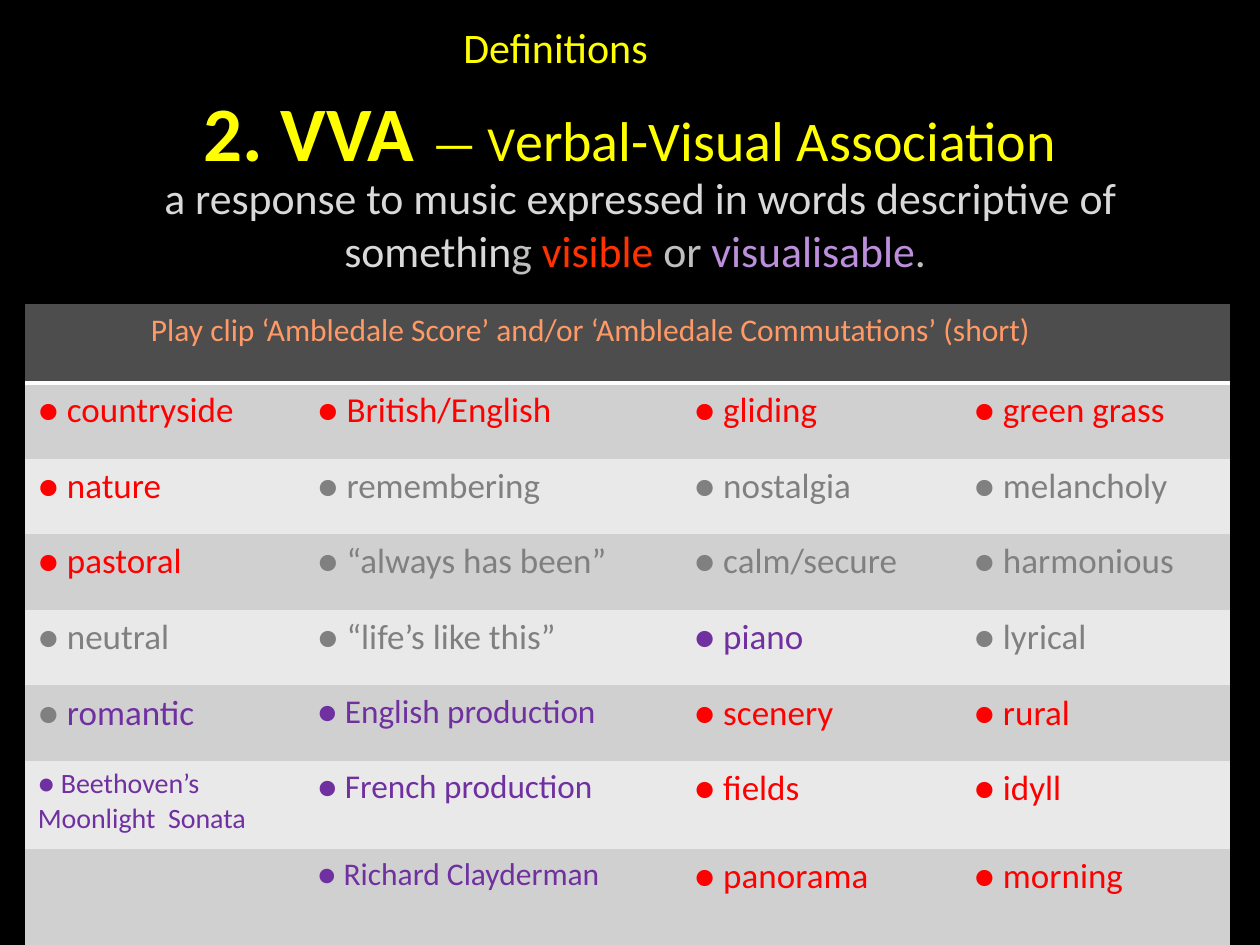
"""Build the slide that defines verbal-visual association."""
from dataclasses import dataclass

from lxml.etree import SubElement
from pptx import Presentation
from pptx.dml.color import RGBColor as Rgb
from pptx.enum.text import MSO_ANCHOR as Anchor, MSO_AUTO_SIZE as AutoSize, PP_ALIGN as Align
from pptx.oxml.ns import qn
from pptx.util import Inches, Pt

COLORS = {
    "black": "000000", "yellow": "FFFF00", "light": "D9D9D9", "silver": "BFBFBF",
    "orange": "FF3300", "lilac": "BC8FDD", "peach": "FF9966", "header": "4D4D4D",
    "band_dark": "D0D0D0", "band_light": "E9E9E9", "white": "FFFFFF",
    "red": "FF0000", "gray": "808080", "purple": "7030A0",
}
FONT = "Calibri"
PLAIN_TABLE_STYLE = "{2D5ABB26-0587-4C30-8999-92F81FD0307C}"
COLUMN_WIDTHS = (2.22, 2.99, 2.22, 2.13)
ROW_HEIGHTS = (0.63, 0.6, 0.6, 0.6, 0.6, 0.6, 0.7, 0.88)


@dataclass(frozen=True)
class Span:
    text: str
    color: str
    size: float
    bold: bool = False


@dataclass(frozen=True)
class Term:
    text: str
    color: str
    size: float = 20
    bullet_color: str = ""


@dataclass(frozen=True)
class TextBox:
    left: float
    top: float
    width: float
    height: float
    spans: tuple[Span, ...]
    align: Align = Align.LEFT


BOXES = (
    TextBox(0.91, 1.31, 8.34, 0.94, (
        Span("a response to music expressed in words descriptive of somethin", "light", 25),
        Span("g ", "silver", 25),
        Span("visible ", "orange", 25),
        Span("or ", "silver", 25),
        Span("visualisable", "lilac", 25),
        Span(". ", "silver", 25),
    ), Align.CENTER),
    TextBox(1.1, 2.41, 8.9, 0.4, (
        Span("Play clip ‘Ambledale Score’ and/or ‘Ambledale Commutations’ (short)", "peach", 18),
    )),
    TextBox(3.58, 0.12, 2.44, 0.5, (Span("Definitions", "yellow", 24),)),
)
TITLE_SPANS = (
    Span("2. VVA ", "yellow", 44, True),
    Span("— V", "yellow", 28),
    Span("erbal-Visual Association", "yellow", 32),
)
TERM_ROWS = (
    (Term("countryside", "red"), Term("British/English", "red"),
     Term("gliding", "red"), Term("green grass", "red")),
    (Term("nature", "red"), Term("remembering", "gray"),
     Term("nostalgia", "gray"), Term("melancholy", "gray")),
    (Term("pastoral", "red"), Term("“always has been”", "gray"),
     Term("calm/secure", "gray"), Term("harmonious", "gray")),
    (Term("neutral", "gray"), Term("“life’s like this”", "gray"),
     Term("piano", "purple"), Term("lyrical", "gray")),
    (Term("romantic", "purple", bullet_color="gray"), Term("English production", "purple", 19),
     Term("scenery", "red"), Term("rural", "red")),
    (Term("Beethoven’s Moonlight  Sonata", "purple", 16), Term("French production", "purple", 19),
     Term("fields", "red"), Term("idyll", "red")),
    (None, Term("Richard Clayderman", "purple", 18),
     Term("panorama", "red"), Term("morning", "red")),
)


def rgb(name: str) -> Rgb:
    """Look up a named colour."""
    return Rgb.from_string(COLORS[name])


def write(para, text: str, *, color: str, size: float, bold: bool = False) -> None:
    """Append one formatted run to a paragraph."""
    run = para.add_run()
    run.text = text
    run.font.name = FONT
    run.font.size = Pt(size)
    run.font.bold = bold
    run.font.color.rgb = rgb(color)


def write_spans(para, spans: tuple[Span, ...], align: Align) -> None:
    """Write a sequence of spans into an aligned paragraph."""
    para.alignment = align
    for span in spans:
        write(para, span.text, color=span.color, size=span.size, bold=span.bold)


def fill_title(title) -> None:
    """Place and write the title placeholder."""
    title.left, title.top = Inches(0.75), Inches(0.68)
    title.width, title.height = Inches(8.5), Inches(0.71)
    frame = title.text_frame
    frame.auto_size = AutoSize.NONE
    frame.vertical_anchor = Anchor.MIDDLE
    write_spans(frame.paragraphs[0], TITLE_SPANS, Align.CENTER)


def add_box(slide, box: TextBox) -> None:
    """Add a wrapping text box."""
    shape = slide.shapes.add_textbox(
        Inches(box.left), Inches(box.top), Inches(box.width), Inches(box.height))
    frame = shape.text_frame
    frame.word_wrap = True
    frame.auto_size = AutoSize.SHAPE_TO_FIT_TEXT
    write_spans(frame.paragraphs[0], box.spans, box.align)


def paint(cell, color: str) -> None:
    """Fill a table cell."""
    cell.fill.solid()
    cell.fill.fore_color.rgb = rgb(color)


def underline_cell(cell, color: str, width: float) -> None:
    """Draw a bottom border on a table cell."""
    properties = cell._tc.get_or_add_tcPr()
    border = SubElement(properties, qn("a:lnB"), w=str(Pt(width)))
    SubElement(SubElement(border, qn("a:solidFill")), qn("a:srgbClr"), val=COLORS[color])
    properties.insert(0, border)


def write_term(cell, term: Term) -> None:
    """Write a bulleted term into a table cell."""
    para = cell.text_frame.paragraphs[0]
    if term.bullet_color:
        write(para, "● ", color=term.bullet_color, size=term.size)
        write(para, term.text, color=term.color, size=term.size)
    else:
        write(para, f"● {term.text}", color=term.color, size=term.size)


def add_term_table(slide) -> None:
    """Add the banded table of responses."""
    frame = slide.shapes.add_table(
        len(ROW_HEIGHTS), len(COLUMN_WIDTHS), Inches(0.2), Inches(2.41),
        Inches(sum(COLUMN_WIDTHS)), Inches(sum(ROW_HEIGHTS)))
    table = frame.table
    table._tbl.tblPr.find(qn("a:tableStyleId")).text = PLAIN_TABLE_STYLE
    for column, width in zip(table.columns, COLUMN_WIDTHS):
        column.width = Inches(width)
    for row, height in zip(table.rows, ROW_HEIGHTS):
        row.height = Inches(height)
    for cell in table.rows[0].cells:
        paint(cell, "header")
        underline_cell(cell, "white", 2)
    for index, terms in enumerate(TERM_ROWS, start=1):
        for cell, term in zip(table.rows[index].cells, terms):
            paint(cell, "band_dark" if index % 2 else "band_light")
            if term:
                write_term(cell, term)


def main() -> None:
    """Create and save the deck."""
    deck = Presentation()
    deck.slide_width, deck.slide_height = Inches(10), Inches(7.5)
    slide = deck.slides.add_slide(deck.slide_layouts[5])
    slide.background.fill.solid()
    slide.background.fill.fore_color.rgb = rgb("black")
    fill_title(slide.shapes.title)
    definition, *labels = BOXES
    add_box(slide, definition)
    add_term_table(slide)
    for label in labels:
        add_box(slide, label)
    deck.save("out.pptx")


if __name__ == "__main__":
    main()
